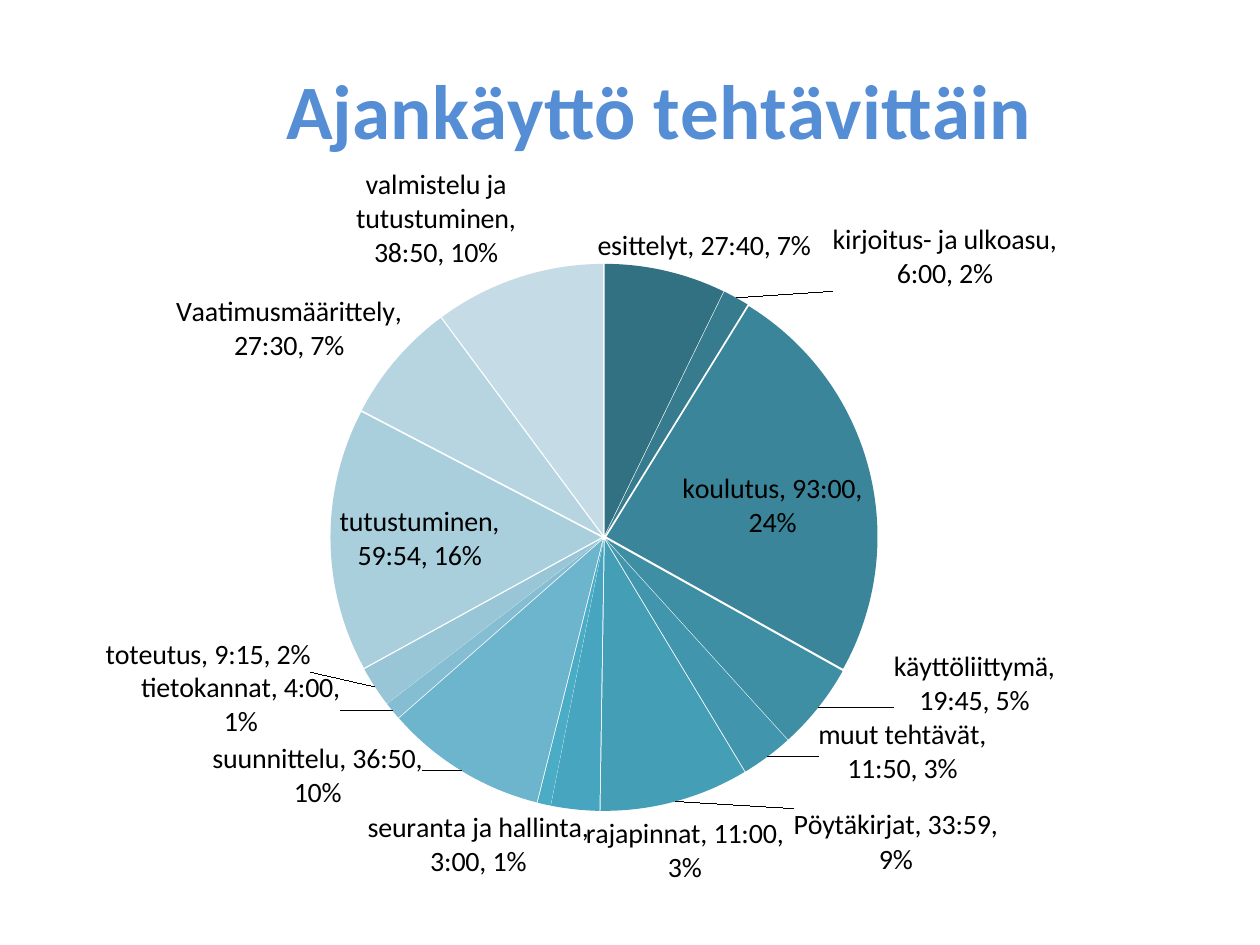
"""Build a slide with a pie chart of time use by task."""
from copy import deepcopy
from math import ceil

from pptx import Presentation
from pptx.chart.data import CategoryChartData
from pptx.dml.color import RGBColor
from pptx.enum.chart import XL_CHART_TYPE, XL_LABEL_POSITION
from pptx.oxml import parse_xml
from pptx.oxml.ns import nsdecls, qn
from pptx.util import Inches, Pt

PIE = XL_CHART_TYPE.PIE
BEST_FIT = XL_LABEL_POSITION.BEST_FIT
OUTSIDE_END = XL_LABEL_POSITION.OUTSIDE_END

THEME = {
    "font": "Calibri",
    "title_color": "558ED5",
    "text_color": "000000",
    "title_size": 44,
    "chart_size": 18,
    "label_size": 16,
}

TASKS = [
    ("esittelyt", 27, 40, "317182", (-0.06, 0)),
    ("kirjoitus- ja ulkoasu", 6, 0, "367B8E", (0.08, 0)),
    ("koulutus", 93, 0, "3A8599", None),
    ("käyttöliittymä", 19, 45, "3E8EA4", (0.06, -0.07)),
    ("muut tehtävät", 11, 50, "4196AD", (0.04, -0.05)),
    ("Pöytäkirjat", 33, 59, "449EB6", (0.1, 0)),
    ("rajapinnat", 11, 0, "47A5BF", (0.18, 0)),
    ("seuranta ja hallinta", 3, 0, "4BACC6", (0.04, 0)),
    ("suunnittelu", 36, 50, "6CB5CC", (-0.03, -0.04)),
    ("tietokannat", 4, 0, "85BED2", (-0.04, -0.05)),
    ("toteutus", 9, 15, "99C6D7", (-0.05, -0.06)),
    ("tutustuminen", 59, 54, "A9CEDC", None),
    ("Vaatimusmäärittely", 27, 30, "B7D5E1", (0.01, 0.01)),
    ("valmistelu ja tutustuminen", 38, 50, "C5DCE6", None),
]


def chart_xml(tag, content):
    return parse_xml(f"<c:{tag} {nsdecls('c')}>{content}</c:{tag}>")


def layout_xml(**settings):
    content = "".join(f'<c:{name} val="{value}"/>' for name, value in settings.items())
    return chart_xml("layout", f"<c:manualLayout>{content}</c:manualLayout>")


presentation = Presentation()
presentation.slide_width = Inches(10)
presentation.slide_height = Inches(7.5)
slide = presentation.slides.add_slide(presentation.slide_layouts[6])

chart_data = CategoryChartData(number_format="[h]:mm")
chart_data.categories = [task[0] for task in TASKS]
chart_data.add_series(
    "Series 1",
    [
        ceil((hours * 60 + minutes) * 10000 / 1440) / 10000
        for _, hours, minutes, _, _ in TASKS
    ],
)
chart = slide.shapes.add_chart(
    PIE, Inches(0.59), Inches(0.13), Inches(9.24), Inches(7.01), chart_data
).chart
chart.has_legend = False
chart.font.name = THEME["font"]
chart.font.size = Pt(THEME["chart_size"])
chart.font.color.rgb = RGBColor.from_string(THEME["text_color"])

chart.has_title = True
title_frame = chart.chart_title.text_frame
title_frame.text = "Ajankäyttö tehtävittäin"
title_font = title_frame.paragraphs[0].runs[0].font
title_format = {"name": THEME["font"], "size": Pt(THEME["title_size"]), "bold": True}
for name, value in title_format.items():
    setattr(title_font, name, value)
title_font.color.rgb = RGBColor.from_string(THEME["title_color"])

plot_area = chart._chartSpace.chart.plotArea
title_element = chart.chart_title._element
for parent in (plot_area, title_element):
    for layout in parent.findall(qn("c:layout")):
        parent.remove(layout)
plot_area.insert(0, layout_xml(
    layoutTarget="inner", xMode="edge", yMode="edge", x=0.22, y=0.28, w=0.47, h=0.62
))
title_element.find(qn("c:tx")).addnext(
    layout_xml(xMode="edge", yMode="edge", x=0.17, y=0.03)
)

plot = chart.plots[0]
plot.vary_by_categories = True
series = plot.series[0]
for index, task in enumerate(TASKS):
    fill = series.points[index].format.fill
    fill.solid()
    fill.fore_color.rgb = RGBColor.from_string(task[3])
explosion = chart_xml("explosion", "")
explosion.set("val", "1")
series._element.find(qn("c:dPt")).addprevious(explosion)

labels = series.data_labels
label_format = {
    "show_value": True,
    "show_category_name": True,
    "show_percentage": True,
    "position": OUTSIDE_END,
}
for name, value in label_format.items():
    setattr(labels, name, value)
labels.font.name = THEME["font"]
labels.font.size = Pt(THEME["label_size"])
labels.font.color.rgb = RGBColor.from_string(THEME["text_color"])

labels_element = labels._element
leader_lines = labels_element.find(qn("c:showLeaderLines"))
if leader_lines is None:
    leader_lines = chart_xml("showLeaderLines", "")
    labels_element.append(leader_lines)
leader_lines.set("val", "1")
leader_lines.addprevious(chart_xml("separator", ", "))
shared_format = [child for child in labels_element if child is not leader_lines]

point_labels = []
for index, task in enumerate(TASKS):
    offset = task[4]
    if offset:
        point_label = chart_xml("dLbl", f'<c:idx val="{index}"/>')
        point_label.append(layout_xml(x=offset[0], y=offset[1]))
        point_label.extend(deepcopy(shared_format))
        point_labels.append(point_label)
labels.position = BEST_FIT
for position, point_label in enumerate(point_labels):
    labels_element.insert(position, point_label)

presentation.save("out.pptx")
